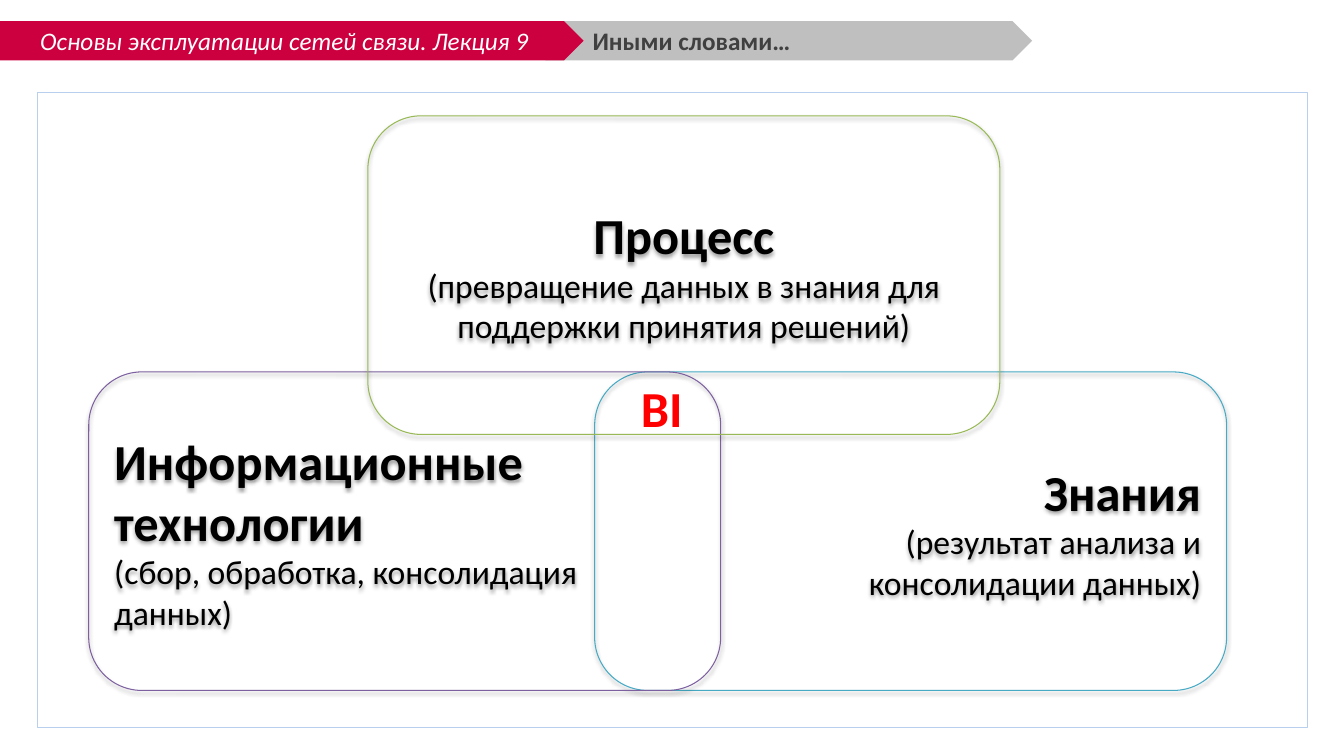
import pptx
import pptx.util
import pptx.dml.color
import pptx.enum.shapes
import pptx.enum.text
import pptx.oxml
import pptx.oxml.ns

Pt = pptx.util.Pt
Shapes = pptx.enum.shapes.MSO_SHAPE
Align = pptx.enum.text.PP_ALIGN
Anchor = pptx.enum.text.MSO_ANCHOR

FONT = "Calibri"
BLACK = "000000"
SET_WIDTH, SET_HEIGHT = 451.4, 227.5
SHADOW = (
    f'<a:effectLst {pptx.oxml.ns.nsdecls("a")}>'
    '<a:outerShdw blurRad="40000" dist="20000" dir="5400000" rotWithShape="0">'
    '<a:srgbClr val="000000"><a:alpha val="38000"/></a:srgbClr>'
    '</a:outerShdw></a:effectLst>'
)


def color(value):
    return pptx.dml.color.RGBColor.from_string(value)


def add_outline(page, kind, box, fill=None, line=None, width=0.75):
    """Add a preset shape without shadow; a missing fill or line stays empty."""
    shape = page.shapes.add_shape(kind, *(Pt(length) for length in box))
    shape.shadow.inherit = False
    if fill:
        shape.fill.solid()
        shape.fill.fore_color.rgb = color(fill)
    else:
        shape.fill.background()
    if line:
        shape.line.color.rgb = color(line)
        shape.line.width = Pt(width)
    else:
        shape.line.fill.background()
    return shape


def add_label(page, box, wrap=True):
    label = page.shapes.add_textbox(*(Pt(length) for length in box))
    label.text_frame.word_wrap = wrap
    return label


def write(shape, lines, align, anchor=Anchor.MIDDLE):
    """Fill a shape with lines of (text, size, colour, bold, italic)."""
    frame = shape.text_frame
    frame.vertical_anchor = anchor
    for index, (text, size, ink, bold, italic) in enumerate(lines):
        para = frame.add_paragraph() if index else frame.paragraphs[0]
        para.text = text
        para.alignment = align
        para.font.name = FONT
        para.font.size = Pt(size)
        para.font.bold = bold
        para.font.italic = italic
        para.font.color.rgb = color(ink)


def add_header(page, left, top, height, course, topic):
    add_outline(page, Shapes.PENTAGON, (left + 393.1, top, 347.8, height), "BFBFBF")
    banner = add_outline(page, Shapes.PENTAGON, (left, top, 420.5, height), "CC003F")
    write(banner, [(course, 18, "FFFFFF", False, True)], Align.CENTER)
    title = add_label(page, (left + 419.8, top, 298.1, height))
    write(title, [(topic, 18, "404040", True, False)], Align.LEFT)


def add_set(page, left, top, line, align, heading, details):
    """Add one rounded set of the diagram, with its heading and details."""
    box = (left, top, SET_WIDTH, SET_HEIGHT)
    shape = add_outline(page, Shapes.ROUNDED_RECTANGLE, box, line=line)
    properties = shape._element.spPr
    properties.remove(properties.find(pptx.oxml.ns.qn("a:effectLst")))
    properties.append(pptx.oxml.parse_xml(SHADOW))
    lines = [(heading, 36, BLACK, True, False)]
    lines += [(detail, 24, BLACK, False, False) for detail in details]
    write(shape, lines, align)


def add_diagram(page, left, top, width, height):
    add_outline(page, Shapes.RECTANGLE, (left, top, width, height),
                line="B8D0ED", width=0.25)
    lower = top + 199.5
    add_set(page, left + 398.2, lower, "46AAC5", Align.RIGHT, "Знания",
            ["(результат анализа и", "консолидации данных)"])
    add_set(page, left + 36.8, lower, "7D60A0", Align.LEFT,
            "Информационные технологии",
            ["(сбор, обработка, консолидация", "данных)"])
    add_set(page, left + 236.2, top + 16.6, "98B955", Align.CENTER, "Процесс",
            ["(превращение данных в знания для поддержки принятия решений)"])
    overlap = add_label(page, (left + 424.1, lower, 44.6, 51.1), wrap=False)
    write(overlap, [("BI", 36, "FF0000", True, False)], Align.LEFT, Anchor.TOP)


def main():
    deck = pptx.Presentation()
    deck.slide_width, deck.slide_height = Pt(960), Pt(540)
    page = deck.slides.add_slide(deck.slide_layouts[6])
    add_header(page, -3.6, 15.1, 28.1,
               "Основы эксплуатации сетей связи. Лекция 9", "Иными словами…")
    add_diagram(page, 26.6, 66.2, 907.2, 453.6)
    deck.save("out.pptx")


if __name__ == "__main__":
    main()
